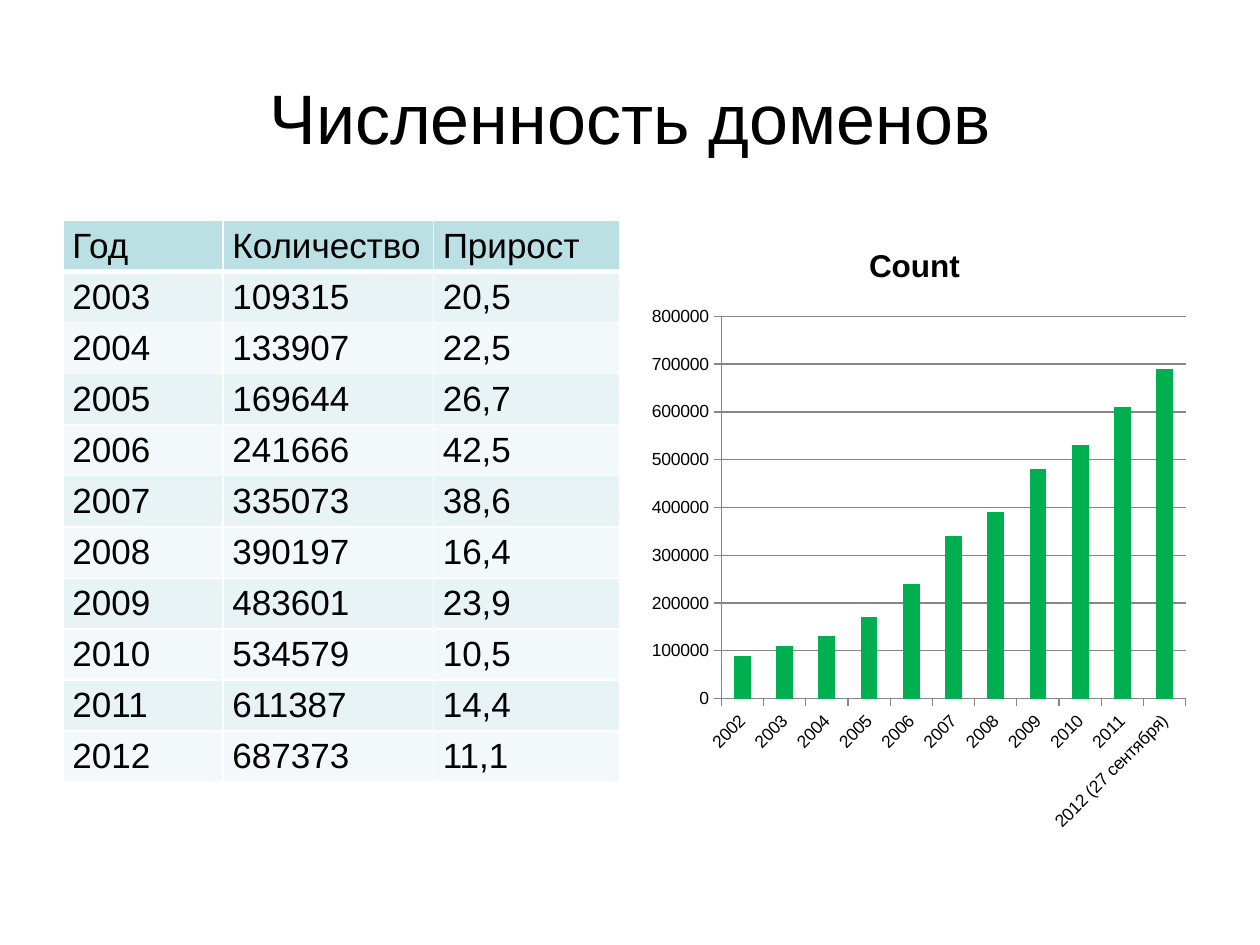
from dataclasses import dataclass
from typing import Any

from lxml import etree
from pptx import Presentation
from pptx.chart import data as chart_data
from pptx.dml.color import RGBColor
from pptx.enum import chart as charts, text
from pptx.oxml import ns
from pptx.util import Inches, Pt

BLACK = RGBColor(0x00, 0x00, 0x00)
WHITE = RGBColor(0xFF, 0xFF, 0xFF)
HEADER = RGBColor(0xBB, 0xE0, 0xE3)
BANDS = (RGBColor(0xF3, 0xF9, 0xFA), RGBColor(0xE7, 0xF3, 0xF4))
GREEN = RGBColor(0x00, 0xB0, 0x50)
GRAY = RGBColor(0x86, 0x86, 0x86)

HEADINGS = ("Год", "Количество", "Прирост")
DOMAINS = (
    (2003, 109315, "20,5"),
    (2004, 133907, "22,5"),
    (2005, 169644, "26,7"),
    (2006, 241666, "42,5"),
    (2007, 335073, "38,6"),
    (2008, 390197, "16,4"),
    (2009, 483601, "23,9"),
    (2010, 534579, "10,5"),
    (2011, 611387, "14,4"),
    (2012, 687373, "11,1"),
)
FIRST_COUNT = 90000


@dataclass
class Page:
    """Draw styled elements on one slide, placed on a grid of 20 columns by 30 rows."""

    slide: Any
    column: int = Inches(0.5)
    row: int = Inches(0.25)
    face: str = "Arial"

    def place(self, left, top, width, height):
        return [round(length) for length in (
            left * self.column, top * self.row, width * self.column, height * self.row)]

    def style(self, font, size, bold=False):
        font.name = self.face
        font.size = Pt(size)
        font.bold = bold
        font.color.rgb = BLACK

    def title(self, words, *area):
        frame = self.slide.shapes.add_textbox(*self.place(*area)).text_frame
        frame.word_wrap = True
        frame.vertical_anchor = text.MSO_ANCHOR.MIDDLE
        frame.text = words
        paragraph = frame.paragraphs[0]
        paragraph.alignment = text.PP_ALIGN.CENTER
        self.style(paragraph.runs[0].font, 40)

    def border(self, cell, side, width):
        line = etree.SubElement(cell._tc.get_or_add_tcPr(), ns.qn(f"a:ln{side}"), w=str(Pt(width)))
        fill = etree.SubElement(line, ns.qn("a:solidFill"))
        etree.SubElement(fill, ns.qn("a:srgbClr"), val=str(WHITE))

    def cell(self, cell, words, color, edges):
        for side, width in edges.items():
            self.border(cell, side, width)
        cell.fill.solid()
        cell.fill.fore_color.rgb = color
        cell.margin_left = cell.margin_right = Pt(5.4)
        cell.margin_top = cell.margin_bottom = 0
        cell.text_frame.text = str(words)
        paragraph = cell.text_frame.paragraphs[0]
        paragraph.line_spacing = 1.15
        self.style(paragraph.runs[0].font, 20)

    def table(self, records, widths, *area):
        frame = self.slide.shapes.add_table(len(records), len(widths), *self.place(*area))
        table = frame.table
        table.first_row = table.horz_banding = False
        for column, width in zip(table.columns, widths):
            column.width = Inches(width)
        for index, record in enumerate(records):
            color = BANDS[index % 2] if index else HEADER
            edges = dict(L=1, R=1, T=3 if index == 1 else 1, B=1 if index else 3)
            for number, words in enumerate(record):
                self.cell(table.cell(index, number), words, color, edges)

    def axis(self, axis):
        axis.format.line.color.rgb = GRAY
        axis.major_tick_mark = charts.XL_TICK_MARK.OUTSIDE
        self.style(axis.tick_labels.font, 10)

    def columns(self, name, labels, values, *area):
        data = chart_data.CategoryChartData()
        data.categories = labels
        data.add_series(name, values)
        chart = self.slide.shapes.add_chart(
            charts.XL_CHART_TYPE.COLUMN_CLUSTERED, *self.place(*area), data).chart
        self.style(chart.font, 10)
        chart.has_legend = False
        chart.has_title = True
        chart.chart_title.text_frame.text = name
        self.style(chart.chart_title.text_frame.paragraphs[0].runs[0].font, 18, True)
        self.axis(chart.category_axis)
        self.axis(chart.value_axis)
        chart.value_axis.minimum_scale = 0
        chart.value_axis.maximum_scale = 800000
        chart.value_axis.major_unit = 100000
        chart.value_axis.major_gridlines.format.line.color.rgb = GRAY
        plot = chart.plots[0]
        plot.vary_by_categories = False
        plot.gap_width = 150
        fill = plot.series[0].format.fill
        fill.solid()
        fill.fore_color.rgb = GREEN


def main():
    deck = Presentation()
    deck.slide_width, deck.slide_height = Inches(10), Inches(7.5)
    page = Page(deck.slides.add_slide(deck.slide_layouts[6]))
    page.title("Численность доменов", 1, 1.2, 18, 5)
    page.table((HEADINGS, *DOMAINS), (1.27, 1.67, 1.48), 1, 7, 8.84, 17.84)
    years = [str(year) for year, _, _ in DOMAINS[:-1]]
    counts = [round(count, -4) for _, count, _ in DOMAINS]
    page.columns("Count ", ["2002", *years, "2012 (27 сентября)"], [FIRST_COUNT, *counts],
                 10.17, 7, 8.83, 19.8)
    deck.save("out.pptx")


if __name__ == "__main__":
    main()
